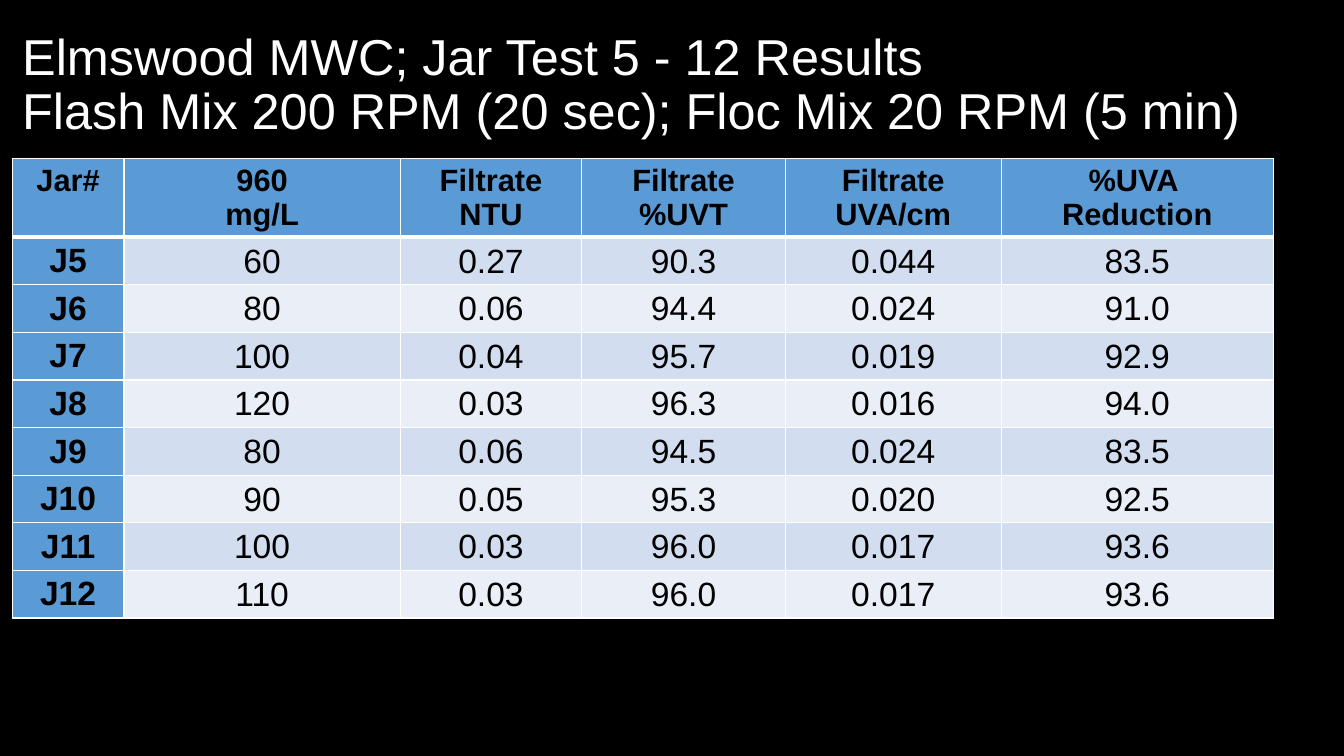
from dataclasses import dataclass

from lxml import etree
from pptx import Presentation
from pptx import util as u
from pptx.dml.color import RGBColor
from pptx.enum import text
from pptx.oxml import ns

WHITE = RGBColor(0xFF, 0xFF, 0xFF)
BLACK = RGBColor(0x00, 0x00, 0x00)
BLUE = RGBColor(0x5B, 0x9B, 0xD5)
BANDS = (RGBColor(0xD2, 0xDE, 0xEF), RGBColor(0xEA, 0xEF, 0xF7))

TITLE = ("Elmswood MWC; Jar Test 5 - 12 Results\v"
         "Flash Mix 200 RPM (20 sec); Floc Mix 20 RPM (5 min)")
HEADERS = ("Jar#", "960\nmg/L", "Filtrate\nNTU", "Filtrate\n%UVT",
           "Filtrate\nUVA/cm", "%UVA \nReduction")
COLUMN_WIDTHS = (1.11, 2.74, 1.8, 2.02, 2.14, 2.7)
ROW_HEIGHT = 0.41


@dataclass(frozen=True)
class Jar:
    name: str
    dose: str
    ntu: str
    uvt: str
    uva: str
    reduction: str

    def values(self) -> tuple[str, ...]:
        return (self.dose, self.ntu, self.uvt, self.uva, self.reduction)


@dataclass(frozen=True)
class CellStyle:
    fill: RGBColor
    size: int
    bold: bool
    tight: bool = False
    top: float = 1
    bottom: float = 1


JARS = (
    Jar("J5", "60", "0.27", "90.3", "0.044", "83.5"),
    Jar("J6", "80", "0.06", "94.4", "0.024", "91.0"),
    Jar("J7", "100", "0.04", "95.7", "0.019", "92.9"),
    Jar("J8", "120", "0.03", "96.3", "0.016", "94.0"),
    Jar("J9", "80", "0.06", "94.5", "0.024", "83.5"),
    Jar("J10", "90", "0.05", "95.3", "0.020", "92.5"),
    Jar("J11", "100", "0.03", "96.0", "0.017", "93.6"),
    Jar("J12", "110", "0.03", "96.0", "0.017", "93.6"),
)
TIGHT_FORMAT = {
    "margin_left": u.Inches(0.01),
    "margin_top": u.Inches(0.01),
    "margin_right": u.Inches(0.01),
    "margin_bottom": 0,
    "vertical_anchor": text.MSO_ANCHOR.MIDDLE,
}


def set_all(target: object, values: dict) -> None:
    for name, value in values.items():
        setattr(target, name, value)


def format_font(font, size: int, color: RGBColor, bold: bool) -> None:
    set_all(font, {"name": "Arial", "size": u.Pt(size), "bold": bold})
    font.color.rgb = color


def add_borders(cell, style: CellStyle) -> None:
    """Put white borders ahead of the cell fill, as the schema requires."""
    tc_pr = cell._tc.get_or_add_tcPr()
    edges = {"lnL": 1, "lnR": 1, "lnT": style.top, "lnB": style.bottom}
    for i, (tag, width) in enumerate(edges.items()):
        line = etree.Element(ns.qn(f"a:{tag}"), w=str(u.Pt(width)))
        fill = etree.SubElement(line, ns.qn("a:solidFill"))
        etree.SubElement(fill, ns.qn("a:srgbClr"), val=str(WHITE))
        tc_pr.insert(i, line)


def fill_cell(cell, content: str, style: CellStyle) -> None:
    cell.text = content
    cell.fill.solid()
    cell.fill.fore_color.rgb = style.fill
    if style.tight:
        set_all(cell, TIGHT_FORMAT)
    for p in cell.text_frame.paragraphs:
        p.alignment = text.PP_ALIGN.CENTER
        for r in p.runs:
            format_font(r.font, style.size, BLACK, style.bold)
    add_borders(cell, style)


def add_title(s) -> None:
    sp = s.shapes.title
    set_all(sp, {"left": u.Inches(0.12), "top": u.Inches(0.13),
                 "width": u.Inches(13.03), "height": u.Inches(1.45)})
    tf = sp.text_frame
    tf.text = TITLE
    set_all(tf, {"word_wrap": True, "auto_size": text.MSO_AUTO_SIZE.NONE,
                 "vertical_anchor": text.MSO_ANCHOR.MIDDLE})
    p = tf.paragraphs[0]
    set_all(p, {"alignment": text.PP_ALIGN.LEFT, "line_spacing": 0.9})
    for r in p.runs:
        format_font(r.font, 36, WHITE, False)


def add_results(s) -> None:
    height = u.Inches(4.83)
    frame = s.shapes.add_table(len(JARS) + 1, len(HEADERS), u.Inches(0.12),
                               u.Inches(1.57), u.Inches(12.51), height)
    table = frame.table
    table.first_col = True
    for column, width in zip(table.columns, COLUMN_WIDTHS):
        column.width = u.Inches(width)
    for row in table.rows:
        row.height = u.Inches(ROW_HEIGHT)
    frame.height = height

    header = CellStyle(BLUE, 22, True, bottom=3)
    for col, label in enumerate(HEADERS):
        fill_cell(table.cell(0, col), label, header)
    for row, jar in enumerate(JARS, start=1):
        top = 3 if row == 1 else 1
        fill_cell(table.cell(row, 0), jar.name, CellStyle(BLUE, 24, True, top=top))
        band = CellStyle(BANDS[(row - 1) % 2], 24, False, tight=True, top=top)
        for col, value in enumerate(jar.values(), start=1):
            fill_cell(table.cell(row, col), value, band)


def main() -> None:
    prs = Presentation()
    set_all(prs, {"slide_width": u.Inches(13.33), "slide_height": u.Inches(7.5)})
    s = prs.slides.add_slide(prs.slide_layouts[5])
    s.background.fill.solid()
    s.background.fill.fore_color.rgb = BLACK
    add_title(s)
    add_results(s)
    prs.save("out.pptx")


if __name__ == "__main__":
    main()
